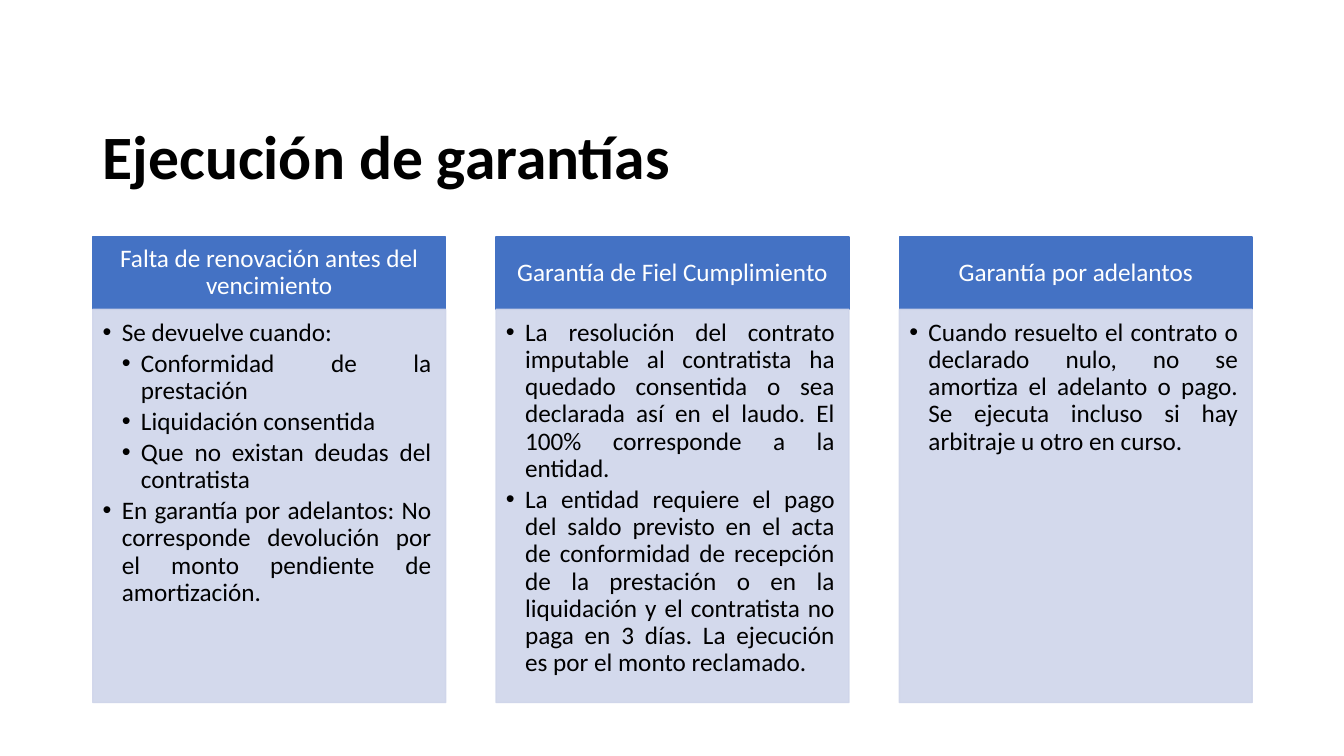
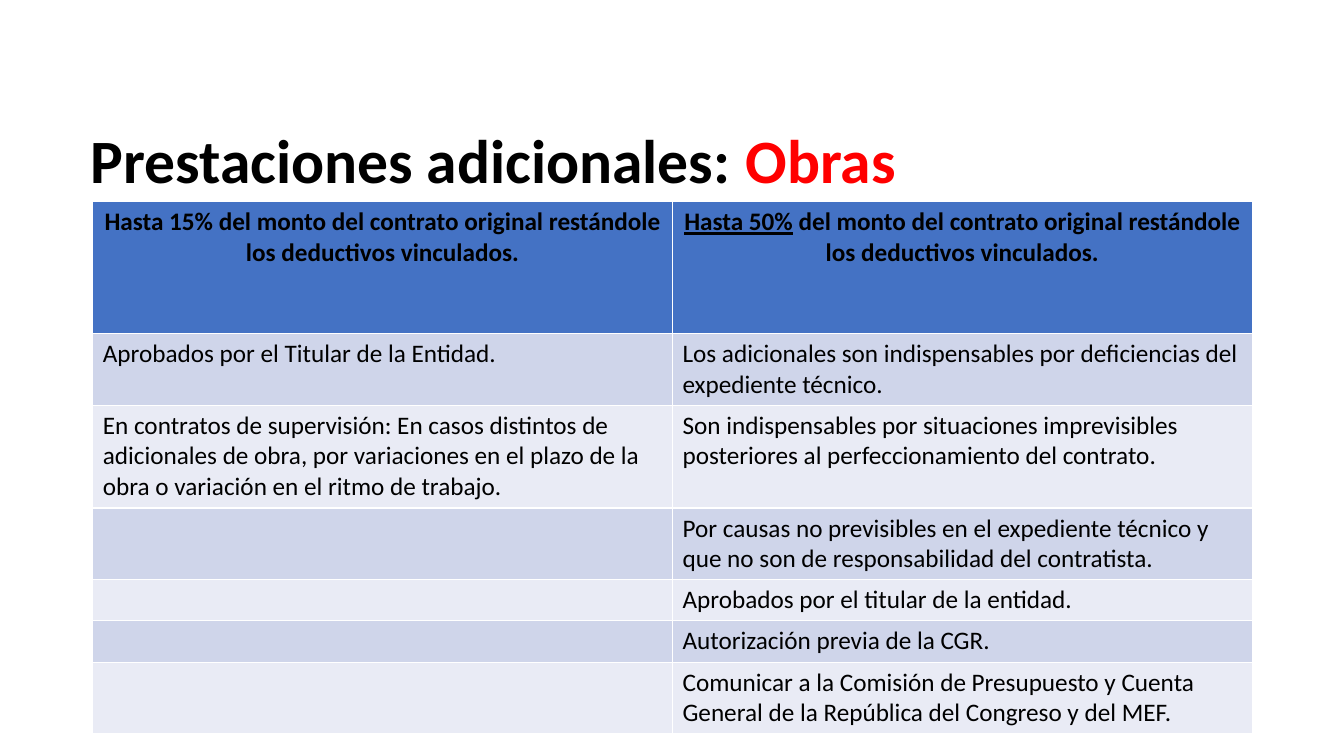
from lxml.etree import SubElement
from pptx import Presentation
from pptx.dml.color import RGBColor
from pptx.enum.shapes import MSO_SHAPE
from pptx.enum.text import MSO_ANCHOR, PP_ALIGN
from pptx.oxml.ns import qn
from pptx.util import Inches, Pt

BLACK = RGBColor(0x00, 0x00, 0x00)
WHITE = RGBColor(0xFF, 0xFF, 0xFF)
RED = RGBColor(0xFF, 0x00, 0x00)
BLUE = RGBColor(0x44, 0x72, 0xC4)
PALE_BLUE = RGBColor(0xCF, 0xD5, 0xEA)
PALE_GREY = RGBColor(0xE9, 0xEB, 0xF5)

FONT = "Calibri"
LEFT = 0.92
CONTENT_WIDTH = 11.5
BULLET_INDENT = 0.19


def write(text_frame, runs, size=18, color=BLACK, bold=False, align=PP_ALIGN.LEFT,
          line_spacing=1.0, space_after=0, bullet_level=0):
    """Write one paragraph of (text, changes) runs, filling an empty first paragraph."""
    paragraph = text_frame.paragraphs[0]
    if paragraph.runs:
        paragraph = text_frame.add_paragraph()
    if bullet_level:
        paragraph.level = bullet_level
        properties = paragraph._p.get_or_add_pPr()
        properties.set("marL", str(Inches(BULLET_INDENT * bullet_level)))
        properties.set("indent", str(-Inches(BULLET_INDENT)))
        SubElement(properties, qn("a:buFont"), typeface="Arial")
        SubElement(properties, qn("a:buChar"), char="•")
    paragraph.alignment = align
    paragraph.line_spacing = line_spacing
    paragraph.space_after = Pt(space_after)
    for text, changes in runs:
        run = paragraph.add_run()
        run.text = text
        run.font.name = FONT
        run.font.size = Pt(size)
        run.font.bold = bold
        run.font.underline = changes.get("underline", False)
        run.font.color.rgb = changes.get("color", color)


def add_box(slide, left, top, width, height, margins, anchor, fill=None, opacity=100):
    """Add a rectangle, filled and outlined if a fill is given; return its text frame."""
    if fill is None:
        shape = slide.shapes.add_textbox(Inches(left), Inches(top), Inches(width), Inches(height))
    else:
        shape = slide.shapes.add_shape(
            MSO_SHAPE.RECTANGLE, Inches(left), Inches(top), Inches(width), Inches(height))
        shape.shadow.inherit = False
        shape.fill.solid()
        shape.fill.fore_color.rgb = fill
        shape.line.color.rgb = fill
        shape.line.width = Pt(1)
        if opacity < 100:
            for color in shape._element.spPr.iter(qn("a:srgbClr")):
                SubElement(color, qn("a:alpha"), val=str(opacity * 1000))
    frame = shape.text_frame
    frame.word_wrap = True
    frame.vertical_anchor = anchor
    frame.margin_left, frame.margin_top, frame.margin_right, frame.margin_bottom = [
        Inches(margin) for margin in margins]
    return frame


presentation = Presentation()
presentation.slide_width = Inches(13.33)
presentation.slide_height = Inches(7.5)
blank_layout = presentation.slide_layouts[6]

# Titles
titles = [
    (LEFT, 0.86, [("Ejecución de garantías", {})]),
    (0.8, 0.9, [("Prestaciones adicionales: ", {}), ("Obras", {"color": RED})]),
]
slides = []
for left, top, runs in titles:
    slide = presentation.slides.add_slide(blank_layout)
    title = add_box(slide, left, top, CONTENT_WIDTH, 1.45, (0.1, 0.05, 0.1, 0.05), MSO_ANCHOR.MIDDLE)
    write(title, runs, size=44, bold=True, line_spacing=0.9)
    slides.append(slide)
guarantees_slide, works_slide = slides

# Guarantees: three columns of a header over a bulleted body
columns = [
    ("Falta de renovación antes del vencimiento", [
        (1, "Se devuelve cuando:"),
        (2, "Conformidad de la prestación"),
        (2, "Liquidación consentida"),
        (2, "Que no existan deudas del contratista"),
        (1, "En garantía por adelantos: No corresponde devolución por el monto "
            "pendiente de amortización."),
    ]),
    ("Garantía de Fiel Cumplimiento", [
        (1, "La resolución del contrato imputable al contratista ha quedado consentida "
            "o sea declarada así en el laudo. El 100% corresponde a la entidad."),
        (1, "La entidad requiere el pago del saldo previsto en el acta de conformidad "
            "de recepción de la prestación o en la liquidación y el contratista no paga "
            "en 3 días. La ejecución es por el monto reclamado."),
    ]),
    ("Garantía por adelantos", [
        (1, "Cuando resuelto el contrato o declarado nulo, no se amortiza el adelanto "
            "o pago. Se ejecuta incluso si hay arbitraje u otro en curso."),
    ]),
]
COLUMN_WIDTH = 3.5
HEADER_TOP, HEADER_HEIGHT, BODY_HEIGHT = 2.35, 0.72, 3.9
column_step = (CONTENT_WIDTH - COLUMN_WIDTH) / (len(columns) - 1)
for index, (heading, bullets) in enumerate(columns):
    left = LEFT + index * column_step
    header = add_box(guarantees_slide, left, HEADER_TOP, COLUMN_WIDTH, HEADER_HEIGHT,
                     (0.14, 0.08, 0.14, 0.08), MSO_ANCHOR.MIDDLE, fill=BLUE)
    write(header, [(heading, {})], color=WHITE, align=PP_ALIGN.CENTER, line_spacing=0.9)
    body = add_box(guarantees_slide, left, HEADER_TOP + HEADER_HEIGHT, COLUMN_WIDTH, BODY_HEIGHT,
                   (0.1, 0.1, 0.14, 0.16), MSO_ANCHOR.TOP, fill=PALE_BLUE, opacity=90)
    for level, text in bullets:
        write(body, [(text, {})], align=PP_ALIGN.JUSTIFY, line_spacing=0.9,
              space_after=2.7, bullet_level=level)

# Additional works: table of limits and conditions
LIMIT_RULE = " del monto del contrato original restándole los deductivos vinculados."
rows = [
    (1.31, [("Hasta 15%" + LIMIT_RULE, {})],
     [("Hasta 50%", {"underline": True}), (LIMIT_RULE, {})]),
    (0.71, [("Aprobados por el Titular de la Entidad.", {})],
     [("Los adicionales son indispensables por deficiencias del expediente técnico.", {})]),
    (1.02, [("En contratos de supervisión: En casos distintos de adicionales de obra, por "
             "variaciones en el plazo de la obra o variación en el ritmo de trabajo.", {})],
     [("Son indispensables por situaciones imprevisibles posteriores al "
       "perfeccionamiento del contrato.", {})]),
    (0.71, [], [("Por causas no previsibles en el expediente técnico y que no son de "
                 "responsabilidad del contratista.", {})]),
    (0.41, [], [("Aprobados por el titular de la entidad.", {})]),
    (0.41, [], [("Autorización previa de la CGR.", {})]),
    (0.71, [], [("Comunicar a la Comisión de Presupuesto y Cuenta General de la República "
                 "del Congreso y del MEF.", {})]),
]
table_height = sum(row[0] for row in rows)
table = works_slide.shapes.add_table(
    len(rows), 2, Inches(LEFT), Inches(2), Inches(CONTENT_WIDTH), Inches(table_height)).table
for row_index, (height, *cell_runs) in enumerate(rows):
    table.rows[row_index].height = Inches(height)
    is_header = row_index == 0
    fill = BLUE if is_header else (PALE_GREY, PALE_BLUE)[row_index % 2]
    for column_index, runs in enumerate(cell_runs):
        cell = table.cell(row_index, column_index)
        cell_properties = cell._tc.get_or_add_tcPr()
        for edge in ("a:lnL", "a:lnR", "a:lnT", "a:lnB"):
            border = SubElement(cell_properties, qn(edge), w=str(Pt(1)))
            border_fill = SubElement(border, qn("a:solidFill"))
            SubElement(border_fill, qn("a:srgbClr"), val=str(WHITE))
        cell.fill.solid()
        cell.fill.fore_color.rgb = fill
        write(cell.text_frame, runs, bold=is_header,
              align=PP_ALIGN.CENTER if is_header else PP_ALIGN.LEFT)

presentation.save("out.pptx")
